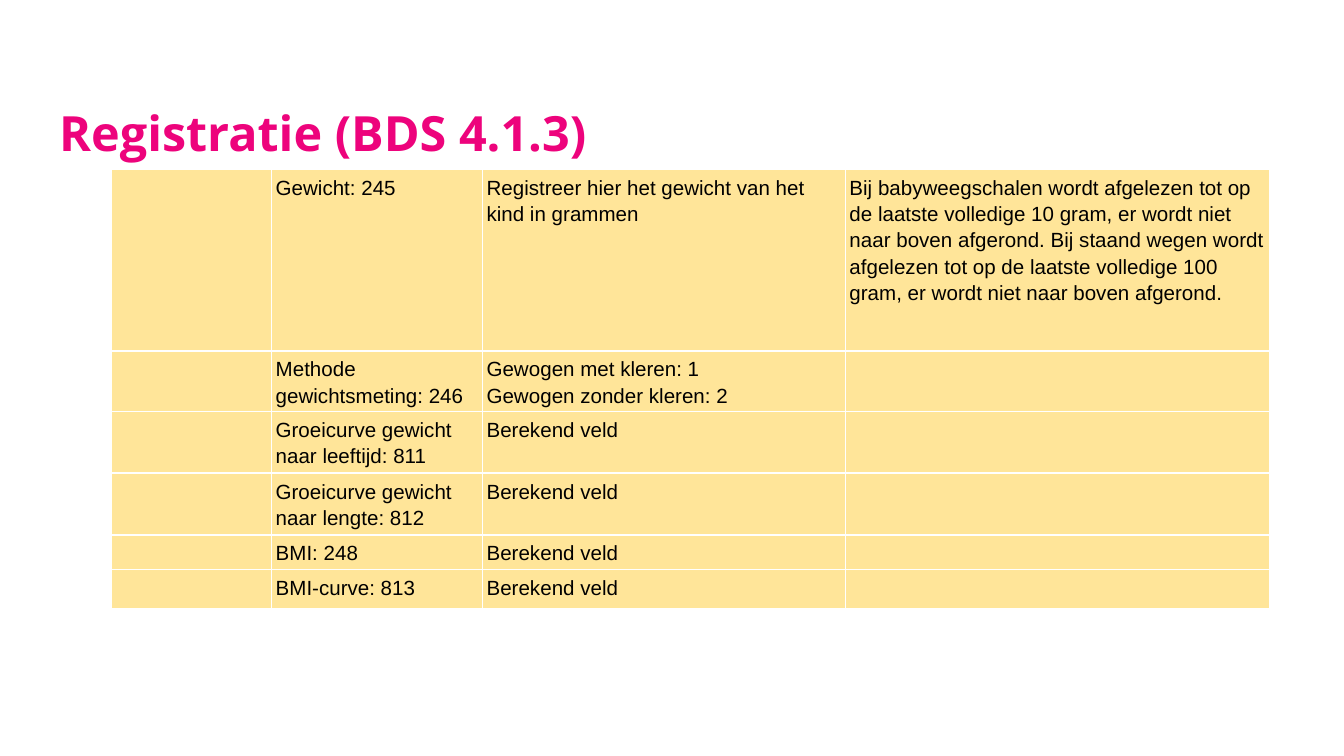
from lxml.etree import SubElement
from pptx import Presentation
from pptx.dml.color import RGBColor
from pptx.enum.text import MSO_ANCHOR, PP_ALIGN
from pptx.oxml.ns import qn
from pptx.util import Pt

MAGENTA, SAND, WHITE, BLACK = "ED037C", "FFE599", "FFFFFF", "000000"
COLUMN_WIDTHS = [85.7, 113, 194.4, 227.5]
ROW_HEIGHTS = [97.2, 32.4, 33.1, 33.1, 18.4, 21]
CALCULATED = "Berekend veld"
FIELDS = [
    ("", "Gewicht: 245", "Registreer hier het gewicht van het kind in grammen",
     "Bij babyweegschalen wordt afgelezen tot op de laatste volledige 10 gram, "
     "er wordt niet naar boven afgerond. Bij staand wegen wordt afgelezen tot op "
     "de laatste volledige 100 gram, er wordt niet naar boven afgerond."),
    ("", "Methode gewichtsmeting: 246",
     "Gewogen met kleren: 1\nGewogen zonder kleren: 2", ""),
    ("", "Groeicurve gewicht naar leeftijd: 811", CALCULATED, ""),
    ("", "Groeicurve gewicht naar lengte: 812", CALCULATED, ""),
    ("", "BMI: 248", CALCULATED, ""),
    ("", "BMI-curve: 813", CALCULATED, ""),
]


def color(value):
    return RGBColor.from_string(value)


def set_font(para, name, size, value, bold=False):
    font = para.font
    font.name, font.size, font.bold = name, Pt(size), bold
    font.color.rgb = color(value)


def add_borders(cell, value, width):
    """Add the four edges, which must precede the cell's fill."""
    properties = cell._tc.get_or_add_tcPr()
    for edge in ("a:lnL", "a:lnR", "a:lnT", "a:lnB"):
        line = SubElement(properties, qn(edge), w=str(Pt(width)))
        fill = SubElement(line, qn("a:solidFill"))
        SubElement(fill, qn("a:srgbClr"), val=value)


def place_title(page, text, left, top, width, height):
    title = page.shapes.title
    title.left, title.top = Pt(left), Pt(top)
    title.width, title.height = Pt(width), Pt(height)
    frame = title.text_frame
    frame.text = text
    frame.vertical_anchor = MSO_ANCHOR.TOP
    frame.margin_left = frame.margin_right = Pt(7.2)
    frame.margin_top = frame.margin_bottom = Pt(7.2)
    para = frame.paragraphs[0]
    para.alignment = PP_ALIGN.LEFT
    para.line_spacing = 1.0
    set_font(para, "Open Sans", 26, MAGENTA, bold=True)


def fill_cell(cell, text):
    add_borders(cell, WHITE, 1)
    cell.fill.solid()
    cell.fill.fore_color.rgb = color(SAND)
    cell.margin_left = cell.margin_right = Pt(2.2)
    cell.margin_top = cell.margin_bottom = Pt(2.2)
    cell.text = text
    for para in cell.text_frame.paragraphs:
        para.line_spacing = 1.15
        set_font(para, "Arial", 11, BLACK)


def place_table(page, left, top):
    frame = page.shapes.add_table(
        len(FIELDS), len(COLUMN_WIDTHS), Pt(left), Pt(top),
        Pt(sum(COLUMN_WIDTHS)), Pt(sum(ROW_HEIGHTS)))
    table = frame.table
    table.first_row = table.horz_banding = False
    for column, width in zip(table.columns, COLUMN_WIDTHS):
        column.width = Pt(width)
    for row, height, texts in zip(table.rows, ROW_HEIGHTS, FIELDS):
        row.height = Pt(height)
        for cell, text in zip(row.cells, texts):
            fill_cell(cell, text)


def main():
    deck = Presentation()
    deck.slide_width, deck.slide_height = Pt(720), Pt(405)
    page = deck.slides.add_slide(deck.slide_layouts[5])
    place_title(page, "Registratie (BDS 4.1.3)", 24.5, 48.2, 635.8, 51.8)
    place_table(page, 59.8, 90.7)
    deck.save("out.pptx")


if __name__ == "__main__":
    main()
